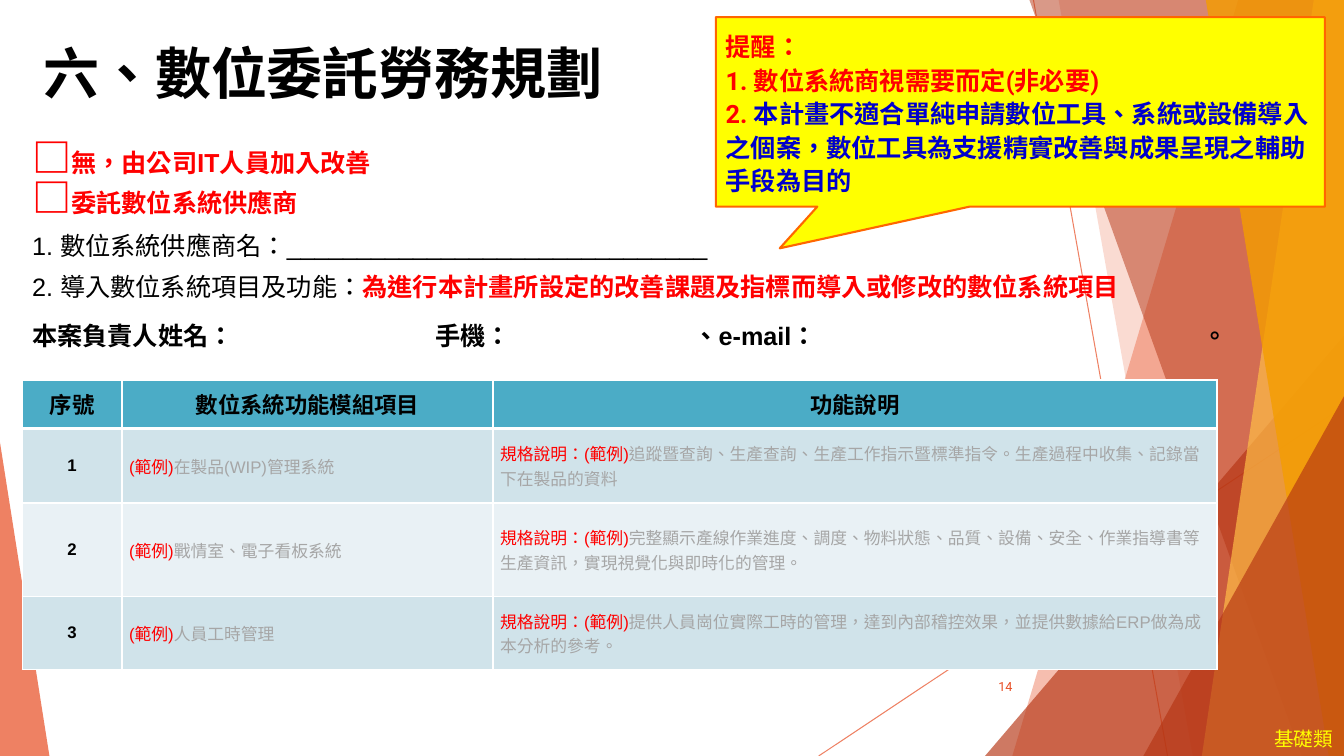
from lxml import etree
from pptx import Presentation
from pptx.dml.color import RGBColor
from pptx.enum.shapes import MSO_CONNECTOR, MSO_SHAPE
from pptx.enum.text import MSO_ANCHOR, PP_ALIGN
from pptx.oxml.ns import qn
from pptx.util import Inches, Pt

LEFT, CENTER, RIGHT = PP_ALIGN.LEFT, PP_ALIGN.CENTER, PP_ALIGN.RIGHT
TOP, MIDDLE = MSO_ANCHOR.TOP, MSO_ANCHOR.MIDDLE
TRIANGLE, CALLOUT = MSO_SHAPE.ISOSCELES_TRIANGLE, MSO_SHAPE.RECTANGULAR_CALLOUT
STRAIGHT = MSO_CONNECTOR.STRAIGHT

COLORS = {
    "black": "000000", "white": "FFFFFF", "red": "FF0000", "blue": "0000CC",
    "gray": "A6A6A6", "yellow": "FFFF00", "callout_line": "FF6600",
    "coral": "E84C22", "brick": "B53513", "gold": "FFBD47", "orange": "F49D00",
    "header": "4BACC6", "odd_row": "D0E3EA", "even_row": "E9F1F5",
}


def rgb(color):
    return RGBColor.from_string(COLORS[color])


class SlideBuilder:
    """Holds the text style and the slide being built."""

    chinese_font = "Noto Sans CJK SC"

    def __init__(self, slide):
        self.slide = slide

    def set_alpha(self, properties, percent):
        color = properties.find(".//" + qn("a:srgbClr"))
        etree.SubElement(color, qn("a:alpha")).set("val", str(percent * 1000))

    def paint(self, shape, color, alpha=100):
        shape.shadow.inherit = False
        shape.fill.solid()
        shape.fill.fore_color.rgb = rgb(color)
        if alpha < 100:
            self.set_alpha(shape.fill._xPr, alpha)
        shape.line.fill.background()

    def line(self, start, end, color, alpha):
        points = [Inches(value) for value in (*start, *end)]
        connector = self.slide.shapes.add_connector(STRAIGHT, *points)
        connector.line.color.rgb = rgb(color)
        connector.line.width = Pt(0.75)
        properties = connector._element.spPr
        self.set_alpha(properties, alpha)
        etree.SubElement(properties, qn("a:effectLst"))

    def polygon(self, points, color, alpha):
        corners = [(Inches(x), Inches(y)) for x, y in points]
        builder = self.slide.shapes.build_freeform(*corners[0], scale=1.0)
        builder.add_line_segments(corners[1:], close=True)
        self.paint(builder.convert_to_shape(), color, alpha)

    def shape(self, kind, box, color, alpha=100, adjustments=()):
        shape = self.slide.shapes.add_shape(kind, *map(Inches, box))
        for index, value in enumerate(adjustments):
            shape.adjustments[index] = value
        self.paint(shape, color, alpha)
        return shape

    def add_runs(self, paragraph, runs, size, font):
        """Each run is (text, color, options); options override the style."""
        for text, color, options in runs:
            run = paragraph.add_run()
            run.text = text
            run.font.size = Pt(options.get("size", size))
            run.font.bold = options.get("bold", False)
            run.font.underline = options.get("underline", False)
            run.font.color.rgb = rgb(color)
            run.font.name = options.get("font", font)
            properties = run._r.get_or_add_rPr()
            properties.set("lang", "zh-TW")
            etree.SubElement(properties, qn("a:ea")).set("typeface", self.chinese_font)

    def fill_text(self, frame, paragraphs, size, font="Arial", spacing=None,
                  align=LEFT, anchor=TOP, wrap=True):
        frame.word_wrap = wrap
        frame.vertical_anchor = anchor
        for index, runs in enumerate(paragraphs):
            paragraph = frame.add_paragraph() if index else frame.paragraphs[0]
            paragraph.alignment = align
            if spacing:
                paragraph.line_spacing = Pt(spacing)
            self.add_runs(paragraph, runs, size, font)

    def text(self, box, paragraphs, size, **style):
        frame = self.slide.shapes.add_textbox(*map(Inches, box)).text_frame
        self.fill_text(frame, paragraphs, size, **style)
        return frame

    def add_tabs(self, paragraph, stops):
        tab_list = etree.SubElement(paragraph._p.get_or_add_pPr(), qn("a:tabLst"))
        for stop in stops:
            tab = etree.SubElement(tab_list, qn("a:tab"))
            tab.set("pos", str(Inches(stop)))
            tab.set("algn", "l")

    def border(self, cell, side, width):
        line = etree.SubElement(cell._tc.get_or_add_tcPr(), qn("a:ln" + side))
        line.set("w", str(Pt(width)))
        fill = etree.SubElement(line, qn("a:solidFill"))
        etree.SubElement(fill, qn("a:srgbClr")).set("val", COLORS["white"])

    def cell(self, cell, runs, color, size, align, widths):
        for side, width in zip("LRTB", widths):
            self.border(cell, side, width)
        cell.fill.solid()
        cell.fill.fore_color.rgb = rgb(color)
        cell.vertical_anchor = MIDDLE
        paragraph = cell.text_frame.paragraphs[0]
        paragraph.alignment = align
        self.add_runs(paragraph, runs, size, "Arial")

    def table(self, box, columns, heights, rows):
        frame = self.slide.shapes.add_table(len(rows), len(columns), *map(Inches, box))
        table = frame.table
        for column, width in zip(table.columns, columns):
            column.width = Inches(width)
        for row, height in zip(table.rows, heights):
            row.height = Inches(height)
        for r, row in enumerate(rows):
            color = "header" if r == 0 else "odd_row" if r % 2 else "even_row"
            widths = (1, 1, 3 if r == 1 else 1, 3 if r == 0 else 1)
            for c, runs in enumerate(row):
                cell = table.cell(r, c)
                if c:
                    cell.margin_left = cell.margin_right = Inches(0.07)
                    cell.margin_top = cell.margin_bottom = 0
                align = CENTER if r == 0 or c == 0 else LEFT
                self.cell(cell, runs, color, 12 if r else 16, align, widths)


def main():
    presentation = Presentation()
    presentation.slide_width, presentation.slide_height = Inches(13.33), Inches(7.5)
    builder = SlideBuilder(presentation.slides.add_slide(presentation.slide_layouts[6]))
    bold = {"bold": True}
    underline = {"bold": True, "underline": True}

    # Background facets: top-left and bottom-left x of each band to the right edge
    def band(top_x, bottom_x, color, alpha):
        builder.polygon([(top_x, 0), (13.33, 0), (13.33, 7.5), (bottom_x, 7.5)], color, alpha)

    builder.line((10.25, 0), (11.58, 7.5), "coral", 70)
    builder.line((13.33, 4.03), (8.12, 7.5), "coral", 70)
    band(12.28, 10.04, "coral", 36)
    band(10.5, 11.83, "coral", 20)
    builder.shape(TRIANGLE, (9.77, 3.33, 3.56, 4.17), "brick", 66, [1])
    band(10.21, 12.91, "brick", 50)
    band(13.03, 11.92, "gold", 70)
    band(11.96, 13.18, "orange", 80)
    builder.shape(TRIANGLE, (11.34, 3.93, 1.99, 3.57), "brick", 66, [1])
    builder.shape(TRIANGLE, (0, 4.39, 0.49, 3.11), "coral", 70, [0])

    # Category label and title
    builder.text((12.54, 7.16, 0.79, 0.34), [[("基礎類", "yellow", {})]], 14,
                 font="Noto Sans CJK SC", wrap=False)
    builder.text((0.33, 0.33, 12.64, 0.77), [[("六、數位委託勞務規劃", "black", bold)]], 40)

    # Options and form fields
    checkbox = ("□", "red", {"bold": True, "size": 28})
    form = builder.text((0.22, 1.34, 12.64, 2.22), [
        [checkbox, ("無，由公司IT人員加入改善", "red", {"bold": True, "font": "Roboto"})],
        [checkbox, ("委託數位系統供應商", "red", bold)],
        [("1. 數位系統供應商名：______________________________", "black", {})],
        [("2. 導入數位系統項目及功能：", "black", {}),
         ("為進行本計畫所設定的改善課題及指標而導入或修改的數位系統項目", "red", bold)],
        [("本案負責人姓名：", "black", bold), ("\t", "black", underline),
         ("手機： ", "black", bold), ("\t", "black", underline),
         ("、e-mail： ", "black", bold), ("\t", "black", underline),
         ("。", "black", bold)],
    ], 18, spacing=28.8)
    contact = form.paragraphs[-1]
    builder.add_tabs(contact, (4, 6.56, 11.61))
    contact.line_spacing = Pt(35)

    # Module table
    modules = [
        ("在製品(WIP)管理系統",
         "追蹤暨查詢、生產查詢、生產工作指示暨標準指令。生產過程中收集、記錄當下在製品的資料"),
        ("戰情室、電子看板系統",
         "完整顯示產線作業進度、調度、物料狀態、品質、設備、安全、作業指導書等生產資訊，實現視覺化與即時化的管理。"),
        ("人員工時管理",
         "提供人員崗位實際工時的管理，達到內部稽控效果，並提供數據給ERP做為成本分析的參考。"),
    ]
    rows = [[[(title, "black", bold)] for title in ("序號", "數位系統功能模組項目", "功能說明")]]
    for number, (module, description) in enumerate(modules, 1):
        rows.append([[(str(number), "black", bold)],
                     [("(範例)", "red", {}), (module, "gray", {})],
                     [("規格說明：(範例)", "red", {}), (description, "gray", {})]])
    builder.table((0.22, 3.77, 11.85, 2.87), (0.99, 3.68, 7.18), (0.48, 0.74, 0.93, 0.72), rows)

    # Page number
    builder.text((9.39, 6.61, 0.75, 0.4), [[("14", "coral", {})]], 9,
                 font="Roboto", align=RIGHT, anchor=MIDDLE)

    # Reminder callout
    reminder = builder.shape(CALLOUT, (7.1, 0.17, 6.04, 1.88), "yellow",
                             adjustments=(-0.395, 0.72))
    reminder.line.color.rgb = rgb("callout_line")
    reminder.line.width = Pt(1.5)
    builder.fill_text(reminder.text_frame, [
        [("提醒：", "red", bold)],
        [("1. 數位系統商視需要而定(非必要)", "red", bold)],
        [("2. ", "red", bold),
         ("本計畫不適合單純申請數位工具、系統或設備導入之個案，數位工具為支援精實改善與成果呈現之輔助手段為目的",
          "blue", bold)],
    ], 18, font="Roboto", spacing=24, anchor=MIDDLE)

    presentation.save("out.pptx")


if __name__ == "__main__":
    main()
